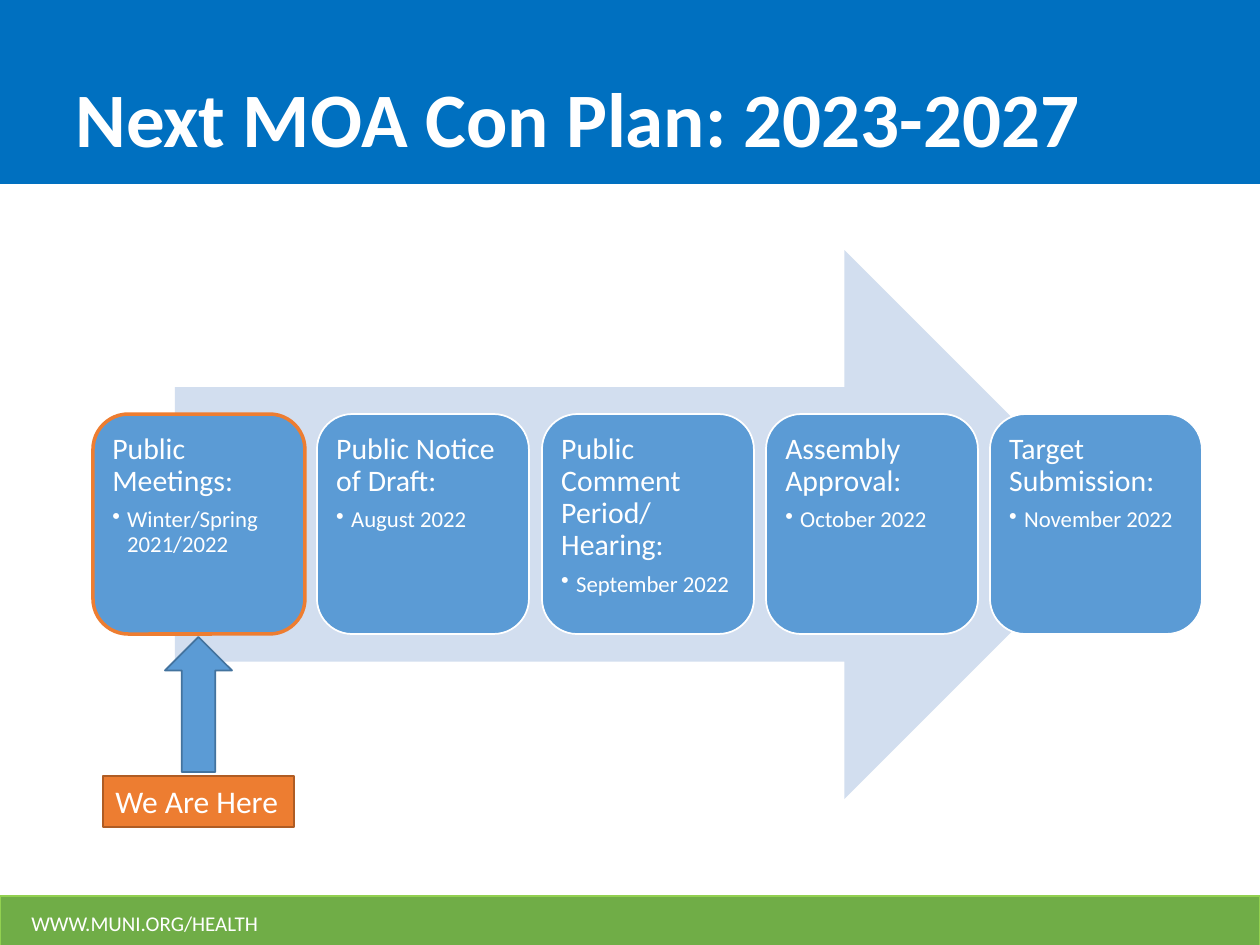
from dataclasses import dataclass

from lxml import etree
from pptx import Presentation
from pptx import util as u
from pptx.dml.color import RGBColor
from pptx.enum import shapes, text

PX = u.Inches(1) / 126
KINDS = shapes.MSO_SHAPE
ANCHORS = text.MSO_ANCHOR


def px(length):
    return u.Emu(round(length * PX))


@dataclass(frozen=True)
class Theme:
    font: str = "Calibri"
    white: str = "FFFFFF"
    header: str = "0070C0"
    footer: str = "70AD47"
    footer_line: str = "92D050"
    pale: str = "D2DEEF"
    blue: str = "5B9BD5"
    blue_line: str = "43739E"
    orange: str = "ED7D31"
    orange_line: str = "AF5C24"
    title_size: int = 44
    label_size: int = 18
    step_size: int = 17
    date_size: int = 13
    footer_size: int = 12


class SlideBuilder:
    def __init__(self, slide, theme):
        self.slide = slide
        self.theme = theme

    def shape(self, kind, at, fill, line=None, line_width=1):
        shape = self.slide.shapes.add_shape(kind, *map(px, at))
        shape.shadow.inherit = False
        shape.fill.solid()
        shape.fill.fore_color.rgb = RGBColor.from_string(fill)
        if line:
            shape.line.color.rgb = RGBColor.from_string(line)
            shape.line.width = u.Pt(line_width)
        else:
            shape.line.fill.background()
        return shape

    def text_box(self, at, words, size, anchor, bold=False):
        box = self.slide.shapes.add_textbox(*map(px, at))
        self.frame(box, word_wrap=True, vertical_anchor=anchor)
        self.fill_para(box.text_frame.paragraphs[0], words, size, bold)

    def frame(self, shape, **values):
        for name, value in values.items():
            setattr(shape.text_frame, name, value)

    def fill_para(self, para, words, size, bold=False, **values):
        """Fill a paragraph with one white, left-aligned run."""
        for name, value in {"alignment": text.PP_ALIGN.LEFT, **values}.items():
            setattr(para, name, value)
        span = para.add_run()
        span.text = words
        style = {"name": self.theme.font, "size": u.Pt(size), "bold": bold}
        for name, value in style.items():
            setattr(span.font, name, value)
        span.font.color.rgb = RGBColor.from_string(self.theme.white)

    def bullet(self, para, indent):
        props = para._p.get_or_add_pPr()
        props.set("marL", str(px(indent)))
        props.set("indent", str(-px(indent)))
        namespace = etree.QName(props).namespace
        etree.SubElement(props, f"{{{namespace}}}buChar").set("char", "•")

    def step_card(self, at, step, date, line, line_width):
        card = self.shape(KINDS.ROUNDED_RECTANGLE, at, self.theme.blue, line, line_width)
        sides = ("left", "top", "right", "bottom")
        margins = {f"margin_{side}": px(9) for side in sides}
        self.frame(card, word_wrap=True, vertical_anchor=ANCHORS.TOP, **margins)
        heading = card.text_frame.paragraphs[0]
        self.fill_para(heading, step, self.theme.step_size, line_spacing=0.9, space_after=u.Pt(6))
        detail = card.text_frame.add_paragraph()
        self.fill_para(detail, date, self.theme.date_size, level=1, line_spacing=0.9,
                       space_after=u.Pt(2))
        self.bullet(detail, 15)

    def label(self, at, words):
        box = self.shape(KINDS.RECTANGLE, at, self.theme.orange, self.theme.orange_line)
        self.frame(box, word_wrap=False, vertical_anchor=ANCHORS.TOP)
        self.fill_para(box.text_frame.paragraphs[0], words, self.theme.label_size)


STEPS = [
    ("Public Meetings:", "Winter/Spring 2021/2022"),
    ("Public Notice of Draft:", "August 2022"),
    ("Public Comment Period/ Hearing:", "September 2022"),
    ("Assembly Approval:", "October 2022"),
    ("Target Submission:", "November 2022"),
]
FIRST_LEFT, LAST_LEFT = 93, 990
CURRENT_STEP = 0


def main():
    deck = Presentation()
    deck.slide_width, deck.slide_height = px(1260), px(945)
    theme = Theme()
    page = SlideBuilder(deck.slides.add_slide(deck.slide_layouts[6]), theme)

    page.shape(KINDS.RECTANGLE, (0, 0, 1260, 184), theme.header)
    page.shape(KINDS.RECTANGLE, (0, 896, 1260, 50), theme.footer, theme.footer_line)
    page.text_box((19, 898, 339, 50), "WWW.MUNI.ORG/HEALTH", theme.footer_size, ANCHORS.MIDDLE)
    page.text_box((63, 0, 1110, 169), "Next MOA Con Plan: 2023-2027", theme.title_size,
                  ANCHORS.BOTTOM, bold=True)

    page.shape(KINDS.RIGHT_ARROW, (175, 250, 944, 549), theme.pale)
    pitch = (LAST_LEFT - FIRST_LEFT) / (len(STEPS) - 1)
    for index, (step, date) in enumerate(STEPS):
        left = round(FIRST_LEFT + index * pitch)
        line, width = (theme.orange, 2) if index == CURRENT_STEP else (theme.white, 1)
        page.step_card((left, 414, 212, 220), step, date, line, width)

    page.label((103, 776, 191, 51), "We Are Here")
    page.shape(KINDS.UP_ARROW, (165, 637, 67, 135), theme.blue, theme.blue_line)
    deck.save("out.pptx")


if __name__ == "__main__":
    main()
